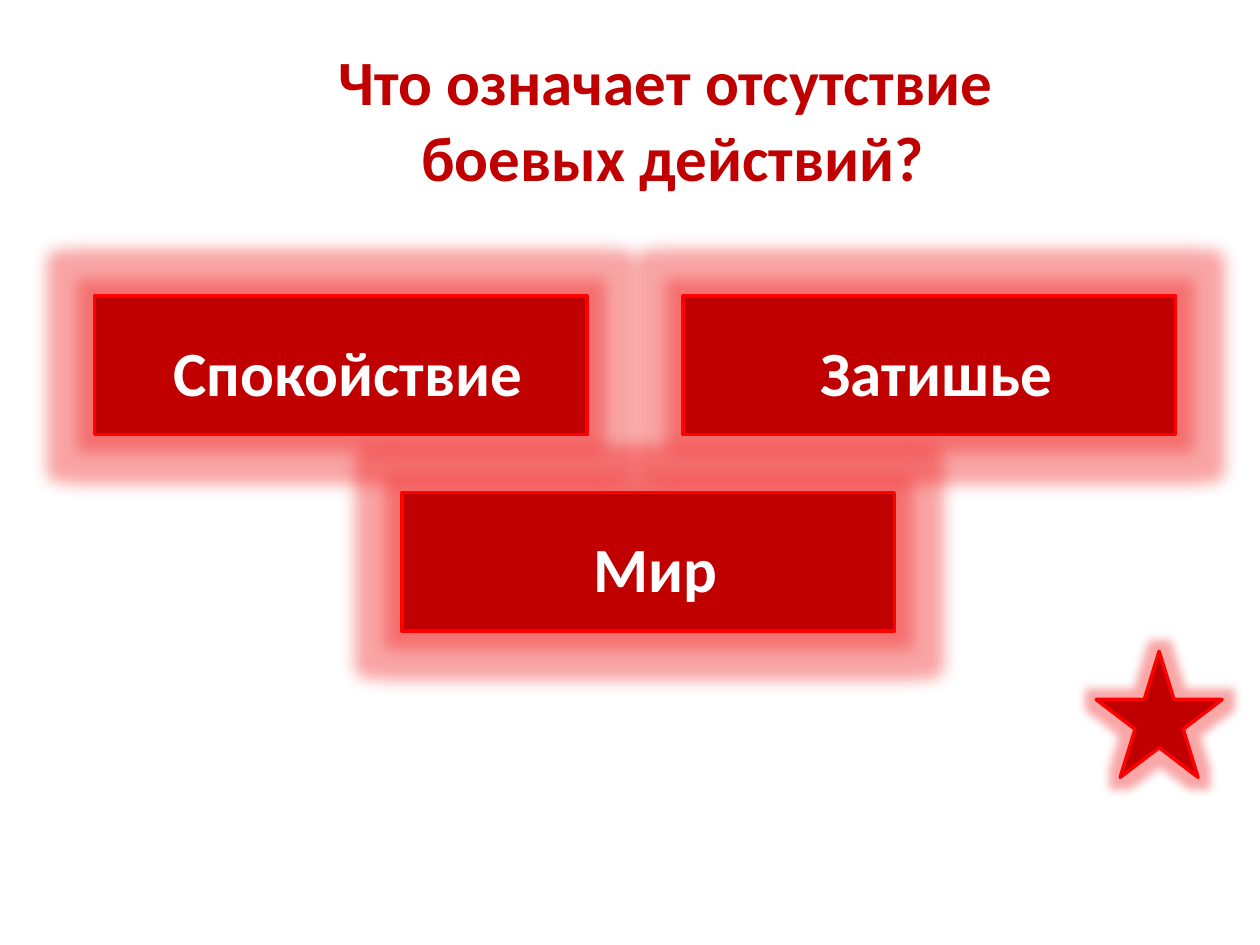
"""Build a quiz slide with a question, three answer buttons and a star."""
from dataclasses import dataclass

from lxml import etree
from pptx import Presentation
from pptx.dml.color import RGBColor
from pptx.enum.shapes import MSO_SHAPE
from pptx.enum.text import MSO_ANCHOR, MSO_AUTO_SIZE, PP_ALIGN
from pptx.oxml.ns import qn
from pptx.util import Inches, Pt

RECTANGLE, STAR = MSO_SHAPE.RECTANGLE, MSO_SHAPE.STAR_5_POINT
CENTER, MIDDLE = PP_ALIGN.CENTER, MSO_ANCHOR.MIDDLE
GROW = MSO_AUTO_SIZE.SHAPE_TO_FIT_TEXT


@dataclass(frozen=True)
class Theme:
    font: str = "Calibri"
    size: int = 36
    fill: str = "C00000"
    outline: str = "FF0000"
    outline_width: int = 2
    light: str = "FFFFFF"
    glow: str = "F02020"
    glow_alpha: int = 40
    button_glow: int = 18
    star_glow: int = 11


THEME = Theme()
SLIDE_WIDTH, SLIDE_HEIGHT = 10, 7.5
QUESTION = ["Что означает отсутствие ", "боевых действий?"]
QUESTION_AREA = (1.52, 0.29, 7.64, 1.31)
ANSWERS = [(" Мир", 3.19, 1), (" Спокойствие", 0.75, 0), (" Затишье", 5.42, 0)]
BUTTON_WIDTH, BUTTON_HEIGHT = 3.91, 1.1
FIRST_ROW, ROW_STEP = 2.35, 1.56
STAR_AREA = (8.7, 5.17, 1, 1)


def add_span(para, text, color):
    para.alignment = CENTER
    span = para.add_run()
    span.text = text
    span.font.name = THEME.font
    span.font.size = Pt(THEME.size)
    span.font.bold = True
    span.font.color.rgb = RGBColor.from_string(color)


def add_glowing_shape(page, kind, area, radius):
    shape = page.shapes.add_shape(kind, *map(Inches, area))
    shape.shadow.inherit = False
    shape.fill.solid()
    shape.fill.fore_color.rgb = RGBColor.from_string(THEME.fill)
    shape.line.color.rgb = RGBColor.from_string(THEME.outline)
    shape.line.width = Pt(THEME.outline_width)
    effects = shape.element.spPr.find(qn("a:effectLst"))
    glow = etree.SubElement(effects, qn("a:glow"), rad=str(Pt(radius)))
    color = etree.SubElement(glow, qn("a:srgbClr"), val=THEME.glow)
    etree.SubElement(color, qn("a:alpha"), val=str(THEME.glow_alpha * 1000))
    return shape


def add_answer(page, text, left, row):
    area = (left, FIRST_ROW + row * ROW_STEP, BUTTON_WIDTH, BUTTON_HEIGHT)
    button = add_glowing_shape(page, RECTANGLE, area, THEME.button_glow)
    frame = button.text_frame
    frame.word_wrap = True
    frame.vertical_anchor = MIDDLE
    para = frame.paragraphs[0]
    para.line_spacing = 1.15
    para.space_after = Pt(10)
    add_span(para, text, THEME.light)


def add_question(page):
    frame = page.shapes.add_textbox(*map(Inches, QUESTION_AREA)).text_frame
    frame.word_wrap = True
    frame.auto_size = GROW
    for index, line in enumerate(QUESTION):
        para = frame.add_paragraph() if index else frame.paragraphs[0]
        add_span(para, line, THEME.fill)


def main():
    deck = Presentation()
    deck.slide_width, deck.slide_height = Inches(SLIDE_WIDTH), Inches(SLIDE_HEIGHT)
    page = deck.slides.add_slide(deck.slide_layouts[6])
    for answer in ANSWERS:
        add_answer(page, *answer)
    add_question(page)
    add_glowing_shape(page, STAR, STAR_AREA, THEME.star_glow)
    deck.save("out.pptx")


if __name__ == "__main__":
    main()
